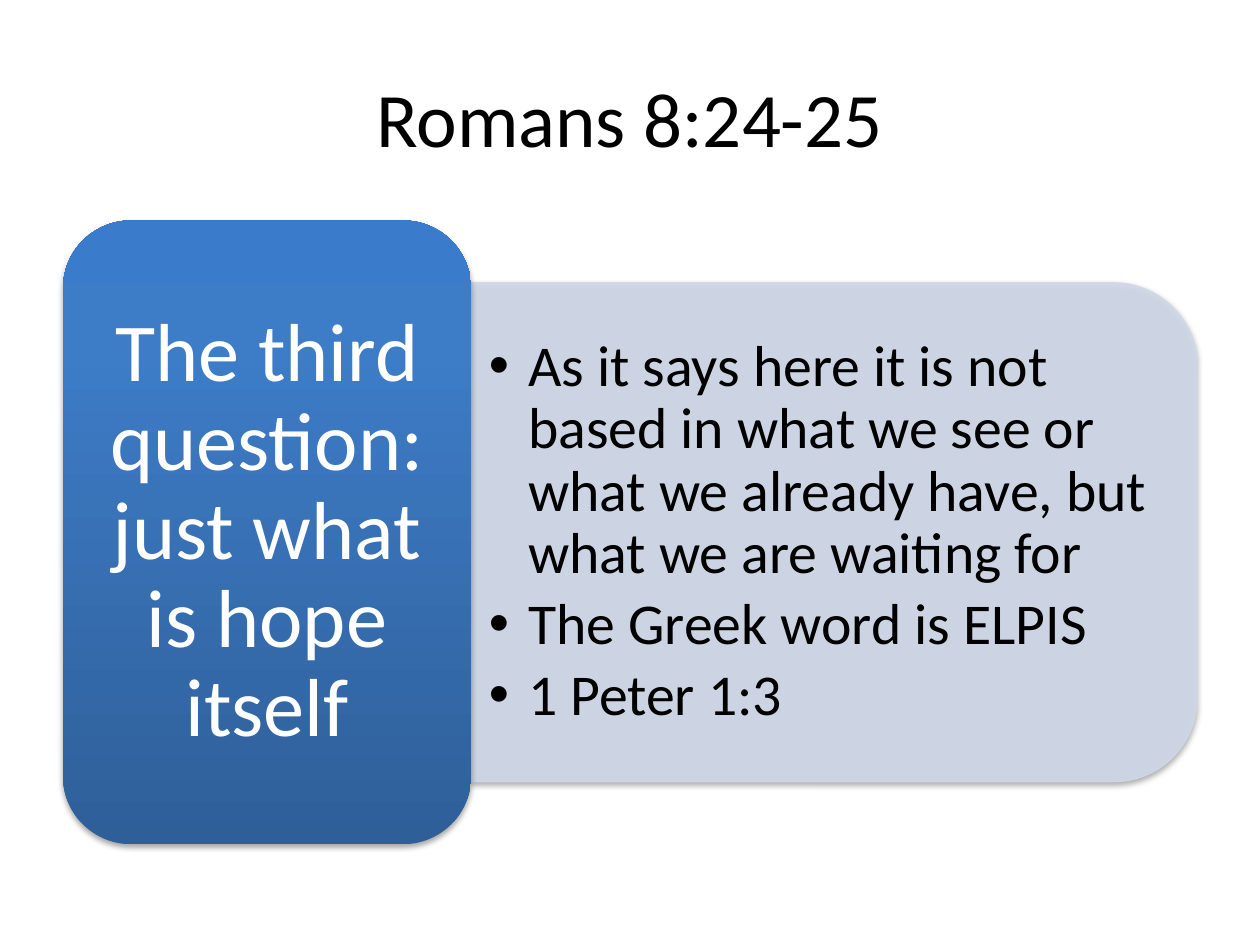
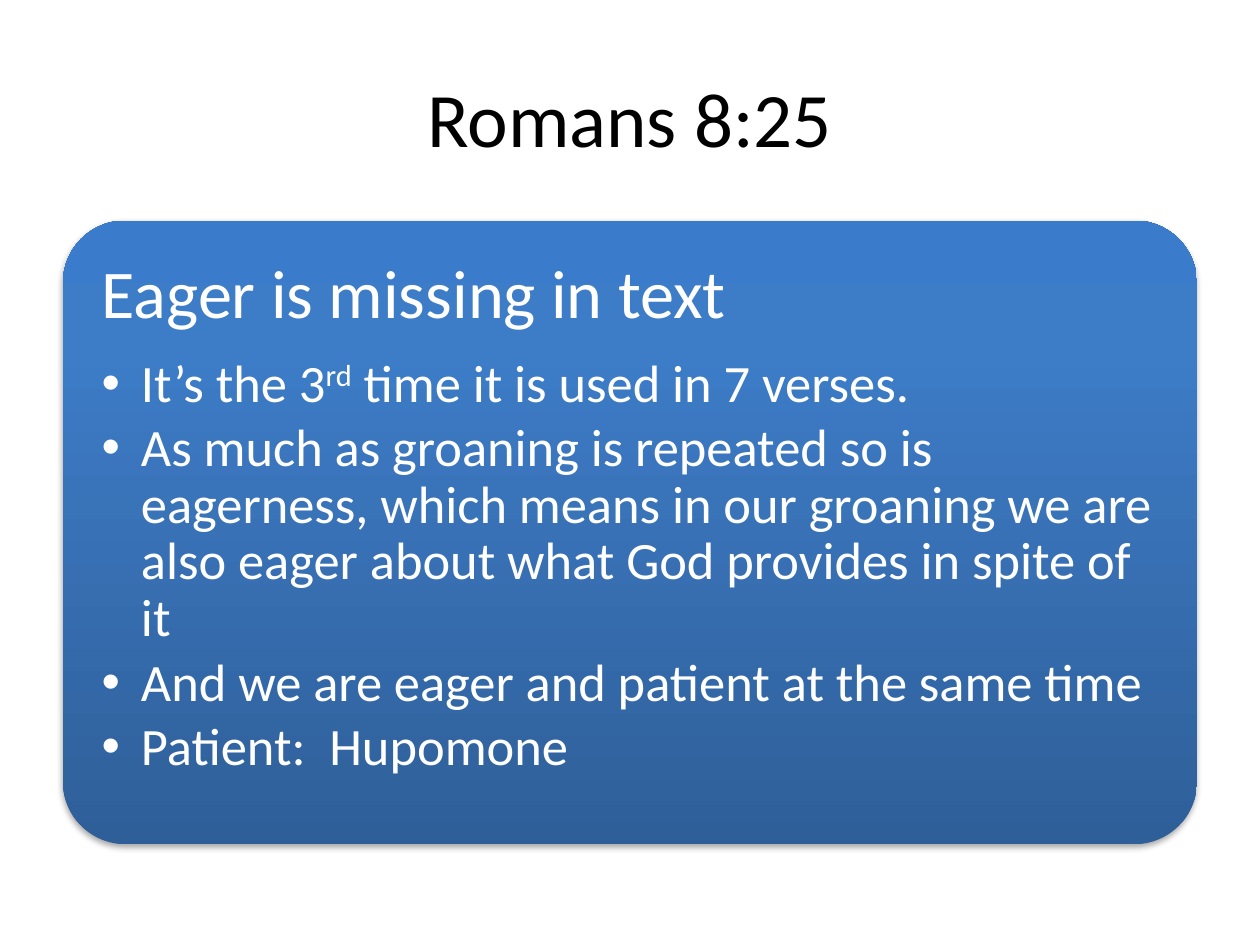
from dataclasses import dataclass

import pptx
import pptx.dml.color
import pptx.enum.shapes
import pptx.enum.text
import pptx.oxml
import pptx.oxml.ns
import pptx.util

Pt = pptx.util.Pt
MSO_SHAPE = pptx.enum.shapes.MSO_SHAPE
MSO_ANCHOR = pptx.enum.text.MSO_ANCHOR
PP_ALIGN = pptx.enum.text.PP_ALIGN
qn = pptx.oxml.ns.qn


@dataclass(frozen=True)
class Theme:
    font: str = "Calibri"
    dark_text: str = "000000"
    light_text: str = "FFFFFF"
    panel: str = "D0D8E8"
    panel_opacity: int = 90
    card_gradient: tuple = ((0, "2F5F99"), (80, "3D7CC7"), (100, "3A7CCB"))
    title_size: int = 44
    question_size: int = 47
    answer_size: int = 33
    heading_size: int = 39
    point_size: int = 30
    line_spacing: float = 0.9
    heading_gap: float = 0.35
    bullet_gap: float = 0.15
    bullet_indent: float = 22.5


THEME = Theme()


@dataclass(frozen=True)
class Box:
    left: float
    top: float
    width: float
    height: float

    def lengths(self):
        return [Pt(value) for value in (self.left, self.top, self.width, self.height)]

    def inside_corners(self, roundness):
        """Return the largest box that clears the rounded corners."""
        gap = min(self.width, self.height) * roundness * 0.29
        return Box(self.left + gap, self.top + gap,
                   self.width - 2 * gap, self.height - 2 * gap)


SLIDE = Box(0, 0, 720, 540)
TITLE = Box(36, 21.6, 648, 90)
BODY = Box(36, 126, 648, 356.4)


def color(value):
    return pptx.dml.color.RGBColor.from_string(value)


def add_element(parent, tag, content="", **attributes):
    namespace = pptx.oxml.ns.nsdecls("a")
    written = " ".join(f'{name}="{value}"' for name, value in attributes.items())
    parent.append(pptx.oxml.parse_xml(
        f"<a:{tag} {namespace} {written}>{content}</a:{tag}>"))


def add_soft_shadow(shape):
    shape.shadow.inherit = False
    effects = shape._element.spPr.find(qn("a:effectLst"))
    add_element(effects, "outerShdw",
                '<a:srgbClr val="000000"><a:alpha val="35000"/></a:srgbClr>',
                blurRad=Pt(3.1), dist=Pt(1.8), dir=90 * 60000, rotWithShape=0)


def add_text_frame(slide, box, insets=(7.2, 3.6), anchor=MSO_ANCHOR.MIDDLE):
    frame = slide.shapes.add_textbox(*box.lengths()).text_frame
    frame.word_wrap = True
    frame.vertical_anchor = anchor
    frame.margin_left = frame.margin_right = Pt(insets[0])
    frame.margin_top = frame.margin_bottom = Pt(insets[1])
    return frame


def write_paragraph(frame, text, size, text_color, gap=0, spacing=THEME.line_spacing,
                    alignment=PP_ALIGN.LEFT, bullet=False):
    """Add a paragraph; text between a pair of ^ marks is superscript."""
    paragraph = frame.paragraphs[0]
    if paragraph.runs:
        paragraph = frame.add_paragraph()
    paragraph.alignment = alignment
    paragraph.line_spacing = spacing
    paragraph.space_after = Pt(round(size * gap, 2))
    if bullet:
        properties = paragraph._p.get_or_add_pPr()
        properties.set("marL", str(Pt(THEME.bullet_indent)))
        properties.set("indent", str(-Pt(THEME.bullet_indent)))
        add_element(properties, "buFont", typeface="Arial")
        add_element(properties, "buChar", char="•")
    paragraph.font.name = THEME.font
    paragraph.font.size = Pt(size)
    paragraph.font.color.rgb = color(text_color)
    for index, part in enumerate(text.split("^")):
        run = paragraph.add_run()
        run.text = part
        if index % 2:
            run.font._element.set("baseline", "30000")


def write_bullets(frame, bullets, size, text_color):
    for bullet in bullets:
        write_paragraph(frame, bullet, size, text_color, THEME.bullet_gap, bullet=True)


def add_title(slide, text):
    write_paragraph(add_text_frame(slide, TITLE), text, THEME.title_size,
                    THEME.dark_text, spacing=1, alignment=PP_ALIGN.CENTER)


def add_card(slide, box, roundness):
    card = slide.shapes.add_shape(MSO_SHAPE.ROUNDED_RECTANGLE, *box.lengths())
    card.adjustments[0] = roundness
    card.line.fill.background()
    card.fill.gradient()
    card.fill.gradient_angle = 90
    stops = card._element.spPr.find(qn("a:gradFill")).find(qn("a:gsLst"))
    for stop in list(stops):
        stops.remove(stop)
    for position, value in THEME.card_gradient:
        add_element(stops, "gs", f'<a:srgbClr val="{value}"/>', pos=position * 1000)
    add_soft_shadow(card)


def add_answer_panel(slide, box, bullets):
    """Draw a panel with rounded right corners: a top-rounded shape turned by 90 degrees."""
    upright = Box(box.left + (box.width - box.height) / 2,
                  box.top + (box.height - box.width) / 2, box.height, box.width)
    panel = slide.shapes.add_shape(MSO_SHAPE.ROUND_2_SAME_RECTANGLE, *upright.lengths())
    panel.rotation = 90
    panel.fill.solid()
    panel.fill.fore_color.rgb = panel.line.color.rgb = color(THEME.panel)
    panel.line.width = Pt(0.75)
    for panel_color in panel._element.spPr.iter(qn("a:srgbClr")):
        add_element(panel_color, "alpha", val=THEME.panel_opacity * 1000)
    add_soft_shadow(panel)

    gap = 14
    text_box = Box(box.left, box.top + gap, box.width - gap, box.height - 2 * gap)
    frame = add_text_frame(slide, text_box, (10, 5))
    write_bullets(frame, bullets, THEME.answer_size, THEME.dark_text)


def add_question_card(slide, box, question):
    roundness = 0.1667
    add_card(slide, box, roundness)
    frame = add_text_frame(slide, box.inside_corners(roundness), (14.1, 7.05))
    write_paragraph(frame, question, THEME.question_size, THEME.light_text,
                    THEME.heading_gap, alignment=PP_ALIGN.CENTER)


def add_points_card(slide, box, heading, bullets):
    roundness = 0.1
    add_card(slide, box, roundness)
    frame = add_text_frame(slide, box.inside_corners(roundness), (11.7, 11.7),
                           MSO_ANCHOR.TOP)
    write_paragraph(frame, heading, THEME.heading_size, THEME.light_text,
                    THEME.heading_gap)
    write_bullets(frame, bullets, THEME.point_size, THEME.light_text)


def build_question_slide(slide, box, title, question, bullets):
    add_title(slide, title)
    card_width = box.width * 0.36
    panel_margin = box.height * 0.1
    panel = Box(box.left + card_width, box.top + panel_margin,
                box.width - card_width, box.height - 2 * panel_margin)
    add_answer_panel(slide, panel, bullets)
    add_question_card(slide, Box(box.left, box.top, card_width, box.height), question)


def build_points_slide(slide, box, title, heading, bullets):
    add_title(slide, title)
    add_points_card(slide, box, heading, bullets)


def main():
    presentation = pptx.Presentation()
    presentation.slide_width = Pt(SLIDE.width)
    presentation.slide_height = Pt(SLIDE.height)
    blank = presentation.slide_layouts[6]

    build_question_slide(
        presentation.slides.add_slide(blank), BODY, "Romans 8:24-25",
        "The third question: just what is hope itself",
        ["As it says here it is not based in what we see or what we already have, "
         "but what we are waiting for",
         "The Greek word is ELPIS",
         "1 Peter 1:3"])
    build_points_slide(
        presentation.slides.add_slide(blank), BODY, "Romans 8:25",
        "Eager is missing in text",
        ["It’s the 3^rd^ time it is used in 7 verses.",
         "As much as groaning is repeated so is eagerness, which means in our groaning "
         "we are also eager about what God provides in spite of it",
         "And we are eager and patient at the same time",
         "Patient:  Hupomone"])
    presentation.save("out.pptx")


if __name__ == "__main__":
    main()
